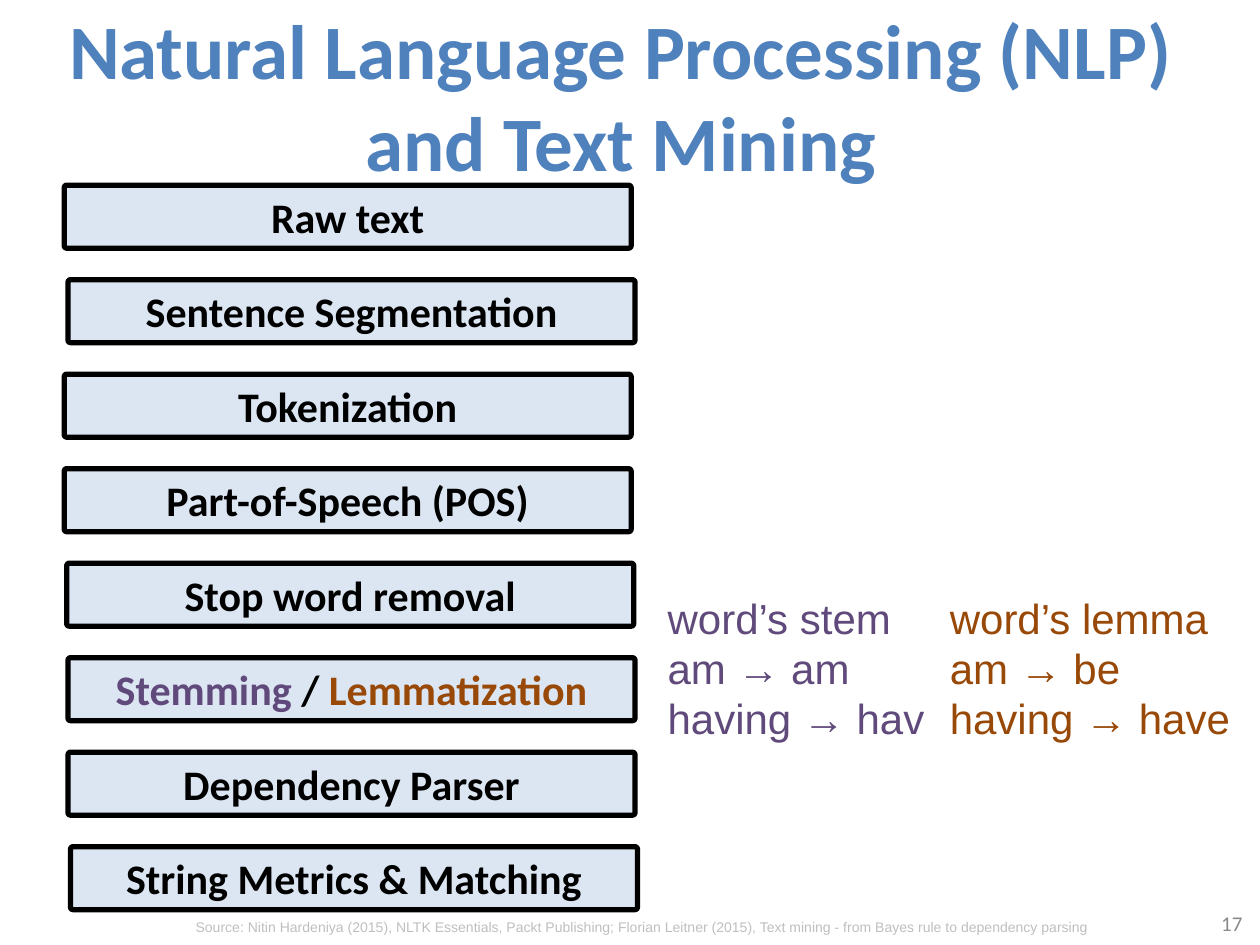
from dataclasses import dataclass

from pptx import Presentation
from pptx.dml.color import RGBColor
from pptx.enum.shapes import MSO_SHAPE
from pptx.enum.text import MSO_ANCHOR, MSO_AUTO_SIZE, PP_ALIGN
from pptx.util import Inches, Pt

LEFT, CENTER, RIGHT = PP_ALIGN.LEFT, PP_ALIGN.CENTER, PP_ALIGN.RIGHT
TOP, MIDDLE = MSO_ANCHOR.TOP, MSO_ANCHOR.MIDDLE
ROUNDED = MSO_SHAPE.ROUNDED_RECTANGLE
NO_FIT = MSO_AUTO_SIZE.NONE
FIT_SHAPE = MSO_AUTO_SIZE.SHAPE_TO_FIT_TEXT
TITLE_ONLY = 5

COLORS = {
    "title": "4F81BD",
    "step": "DCE6F2",
    "ink": "000000",
    "stem": "604A7B",
    "lemma": "984807",
    "source": "BFBFBF",
    "number": "898989",
}

SLIDE_W, SLIDE_H = 10, 7.5
STEP_TOP = 1.47
STEP_PITCH = SLIDE_H / 10
STEP_W, STEP_H = 4.5, SLIDE_H / 15


@dataclass(frozen=True)
class Step:
    left: float
    words: tuple[tuple[str, str], ...]


@dataclass(frozen=True)
class Label:
    box: tuple[float, float, float, float]
    lines: tuple[str, ...]
    color: str
    size: float
    font: str = "Arial"
    align: PP_ALIGN = LEFT
    anchor: MSO_ANCHOR = TOP
    wrap: bool = True
    fit: MSO_AUTO_SIZE = FIT_SHAPE


STEPS = (
    Step(0.51, (("Raw text", "ink"),)),
    Step(0.54, (("Sentence Segmentation", "ink"),)),
    Step(0.51, (("Tokenization", "ink"),)),
    Step(0.51, (("Part-of-Speech (POS)", "ink"),)),
    Step(0.53, (("Stop word removal", "ink"),)),
    Step(0.54, (("Stemming", "stem"), (" / ", "ink"), ("Lemmatization", "lemma"))),
    Step(0.54, (("Dependency Parser", "ink"),)),
    Step(0.56, (("String Metrics & Matching", "ink"),)),
)

LABELS = (
    Label((5.2, 4.65, 2.25, 1.31),
          ("word’s stem", "am → am", "having → hav"), "stem", 24, wrap=False),
    Label((7.44, 4.65, 2.44, 1.31),
          ("word’s lemma", "am → be", "having → have"), "lemma", 24, wrap=False),
    Label((1.34, 7.24, 7.52, 0.24),
          ("Source: Nitin Hardeniya (2015), NLTK Essentials, Packt Publishing; "
           "Florian Leitner (2015), Text mining - from Bayes rule to dependency parsing",),
          "source", 8, align=CENTER),
    Label((7.63, 7.13, 2.33, 0.4), ("17",), "number", 12,
          font="Calibri", align=RIGHT, anchor=MIDDLE, fit=NO_FIT),
)


def rgb(name: str) -> RGBColor:
    return RGBColor.from_string(COLORS[name])


def apply(target, values: dict) -> None:
    for name, value in values.items():
        setattr(target, name, value)


def add_run(p, text: str, color: str, size: float, font: str, bold: bool = False) -> None:
    r = p.add_run()
    r.text = text
    apply(r.font, {"name": font, "size": Pt(size), "bold": bold})
    r.font.color.rgb = rgb(color)


def format_title(s) -> None:
    sp = s.shapes.title
    apply(sp, {"left": Inches(0.43), "top": Inches(0.12),
               "width": Inches(9), "height": Inches(1.26)})
    tf = sp.text_frame
    apply(tf, {"word_wrap": True, "auto_size": NO_FIT, "vertical_anchor": MIDDLE})
    p = tf.paragraphs[0]
    p.alignment = CENTER
    add_run(p, "Natural Language Processing (NLP) and Text Mining",
            "title", 44, "Calibri", True)


def add_step(s, row: int, step: Step) -> None:
    top = STEP_TOP + row * STEP_PITCH
    sp = s.shapes.add_shape(ROUNDED, Inches(step.left), Inches(top),
                            Inches(STEP_W), Inches(STEP_H))
    sp.adjustments[0] = 0.04
    sp.shadow.inherit = False
    sp.fill.solid()
    sp.fill.fore_color.rgb = rgb("step")
    sp.line.color.rgb = rgb("ink")
    sp.line.width = Pt(3)
    tf = sp.text_frame
    apply(tf, {"margin_left": 0, "margin_top": 0, "margin_right": 0,
               "margin_bottom": 0, "word_wrap": True, "vertical_anchor": MIDDLE})
    p = tf.paragraphs[0]
    p.alignment = CENTER
    for text, color in step.words:
        add_run(p, text, color, 24, "Calibri", True)


def add_label(s, label: Label) -> None:
    sp = s.shapes.add_textbox(*map(Inches, label.box))
    tf = sp.text_frame
    apply(tf, {"word_wrap": label.wrap, "auto_size": label.fit,
               "vertical_anchor": label.anchor})
    for i, line in enumerate(label.lines):
        p = tf.add_paragraph() if i else tf.paragraphs[0]
        p.alignment = label.align
        add_run(p, line, label.color, label.size, label.font)


def main() -> None:
    prs = Presentation()
    apply(prs, {"slide_width": Inches(SLIDE_W), "slide_height": Inches(SLIDE_H)})
    s = prs.slides.add_slide(prs.slide_layouts[TITLE_ONLY])
    format_title(s)
    for row, step in enumerate(STEPS):
        add_step(s, row, step)
    for label in LABELS:
        add_label(s, label)
    prs.save("out.pptx")


if __name__ == "__main__":
    main()
